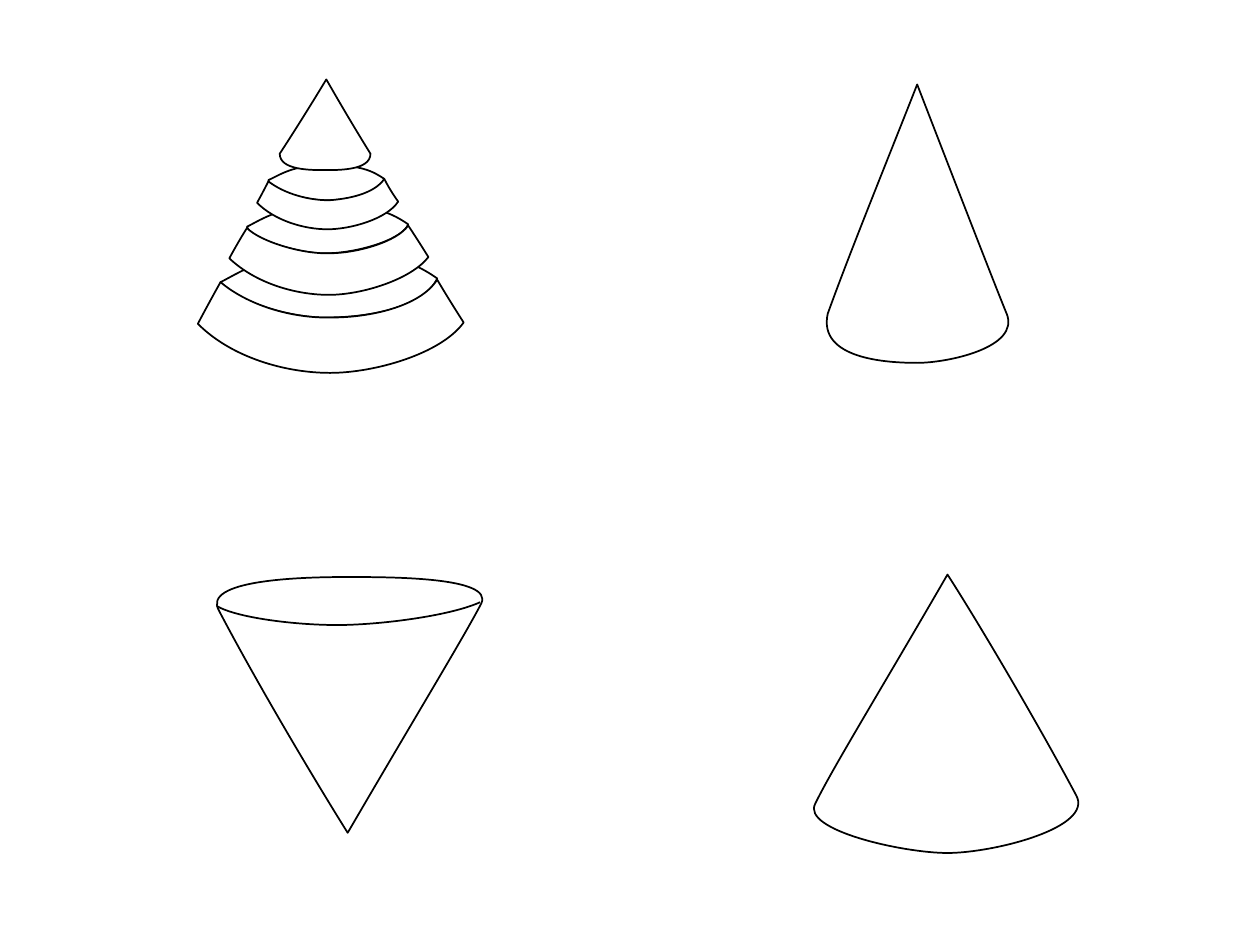
from dataclasses import dataclass

from lxml import etree
from pptx import Presentation
from pptx import util as u
from pptx.dml.color import RGBColor
from pptx.oxml import ns


@dataclass
class Theme:
    fill: str = "FFFFFF"
    line: str = "000000"
    width: float = 1


def bend(a, b, c, d, t):
    s = 1 - t
    return tuple(
        s**3 * p + 3 * s * s * t * q + 3 * s * t * t * r + t**3 * e
        for p, q, r, e in zip(a, b, c, d)
    )


class Sheet:
    COLS, ROWS, STEPS = 1000, 750, 24

    def __init__(self, deck, theme):
        self.theme = theme
        self.slide = deck.slides.add_slide(deck.slide_layouts[6])
        self.col = deck.slide_width / self.COLS
        self.row = deck.slide_height / self.ROWS
        back = self.slide.background.fill
        back.solid()
        back.fore_color.rgb = RGBColor.from_string(theme.fill)

    def group(self):
        return self.slide.shapes.add_group_shape().shapes

    def curve(self, start, *arcs, home=None, close=True):
        home = self.slide.shapes if home is None else home
        first, *rest = [
            (round(x * self.col), round(y * self.row))
            for x, y in (start, *(p for arc in arcs for p in arc))
        ]
        arcs = [rest[i:i + 3] for i in range(0, len(rest), 3)]
        dots, last = [], first
        for arc in arcs:
            dots += [bend(last, *arc, n / self.STEPS) for n in range(1, self.STEPS + 1)]
            last = arc[-1]
        pen = home.build_freeform(*first, scale=1.0)
        pen.add_line_segments(dots, close=close)
        shape = pen.convert_to_shape()
        self.smooth(shape, first, arcs, close)
        self.paint(shape)

    def smooth(self, shape, first, arcs, close):
        path = shape.element.xpath(".//a:path")[0]
        for node in list(path):
            path.remove(node)
        steps = [("a:moveTo", [first])] + [("a:cubicBezTo", arc) for arc in arcs]
        for tag, spots in steps:
            node = etree.SubElement(path, ns.qn(tag))
            for x, y in spots:
                dot = etree.SubElement(node, ns.qn("a:pt"))
                dot.set("x", str(x - shape.left))
                dot.set("y", str(y - shape.top))
        if close:
            etree.SubElement(path, ns.qn("a:close"))

    def paint(self, shape):
        shape.shadow.inherit = False
        shape.fill.solid()
        shape.fill.fore_color.rgb = RGBColor.from_string(self.theme.fill)
        shape.line.color.rgb = RGBColor.from_string(self.theme.line)
        shape.line.width = u.Pt(self.theme.width)


WIDE = (
    (647, 638),
    [(660, 611), (700, 546), (752, 456)],
    [(774, 490), (822, 571), (854, 631)],
    [(869, 657), (788, 677), (752, 677)],
    [(717, 677), (636, 659), (647, 638)],
)
SLIM = (
    (657, 249),
    [(675, 199), (708, 118), (728, 67)],
    [(728, 67), (789, 225), (799, 249)],
    [(810, 276), (752, 288), (728, 288)],
    [(704, 288), (649, 285), (657, 249)],
)
TIERS = [
    ((262, 200),
     [(211, 201), (191, 216), (175, 224)],
     [(189, 240), (232, 253), (261, 252)],
     [(290, 252), (336, 245), (347, 221)],
     [(331, 210), (312, 200), (262, 200)]),
    ((175, 224),
     [(166, 240), (157, 257), (157, 257)],
     [(184, 284), (227, 296), (262, 296)],
     [(297, 296), (350, 281), (368, 256)],
     [(368, 256), (357, 239), (347, 222)],
     [(333, 244), (292, 252), (264, 252)],
     [(235, 253), (199, 244), (175, 224)]),
    ((260, 163),
     [(223, 163), (208, 174), (196, 180)],
     [(199, 190), (239, 202), (260, 201)],
     [(281, 201), (319, 191), (324, 178)],
     [(312, 170), (298, 162), (260, 163)]),
    ((196, 181),
     [(189, 192), (182, 205), (182, 205)],
     [(203, 225), (235, 234), (261, 234)],
     [(287, 234), (326, 222), (340, 204)],
     [(340, 204), (332, 191), (324, 179)],
     [(315, 192), (283, 201), (262, 201)],
     [(241, 202), (207, 192), (196, 181)]),
    ((259, 131),
     [(232, 131), (222, 139), (213, 143)],
     [(214, 152), (244, 159), (259, 159)],
     [(274, 159), (303, 154), (305, 142)],
     [(296, 136), (287, 131), (259, 131)]),
    ((213, 144),
     [(209, 152), (204, 161), (204, 161)],
     [(218, 175), (241, 182), (260, 182)],
     [(278, 182), (307, 174), (316, 160)],
     [(316, 160), (310, 152), (305, 142)],
     [(297, 154), (276, 158), (261, 159)],
     [(245, 159), (226, 154), (213, 144)]),
    ((222, 122),
     [(241, 93), (259, 63), (259, 63)],
     [(259, 63), (276, 93), (294, 122)],
     [(294, 135), (270, 135), (258, 135)],
     [(246, 135), (222, 135), (222, 122)]),
]
CUP = (
    (382, 479),
    [(368, 506), (329, 570), (276, 661)],
    [(254, 626), (206, 546), (174, 485)],
    [(159, 460), (240, 458), (275, 458)],
    [(311, 458), (392, 458), (382, 479)],
)
RIM = (
    (172, 481),
    [(189, 491), (241, 497), (275, 496)],
    [(310, 495), (359, 488), (381, 478)],
)


def main():
    deck = Presentation()
    deck.slide_width, deck.slide_height = u.Inches(10), u.Inches(7.5)
    sheet = Sheet(deck, Theme())
    for cone in (WIDE, SLIM):
        sheet.curve(*cone)
    tower = sheet.group()
    for tier in TIERS:
        sheet.curve(*tier, home=tower)
    funnel = sheet.group()
    sheet.curve(*CUP, home=funnel)
    sheet.curve(*RIM, home=funnel, close=False)
    deck.save("out.pptx")


if __name__ == "__main__":
    main()
